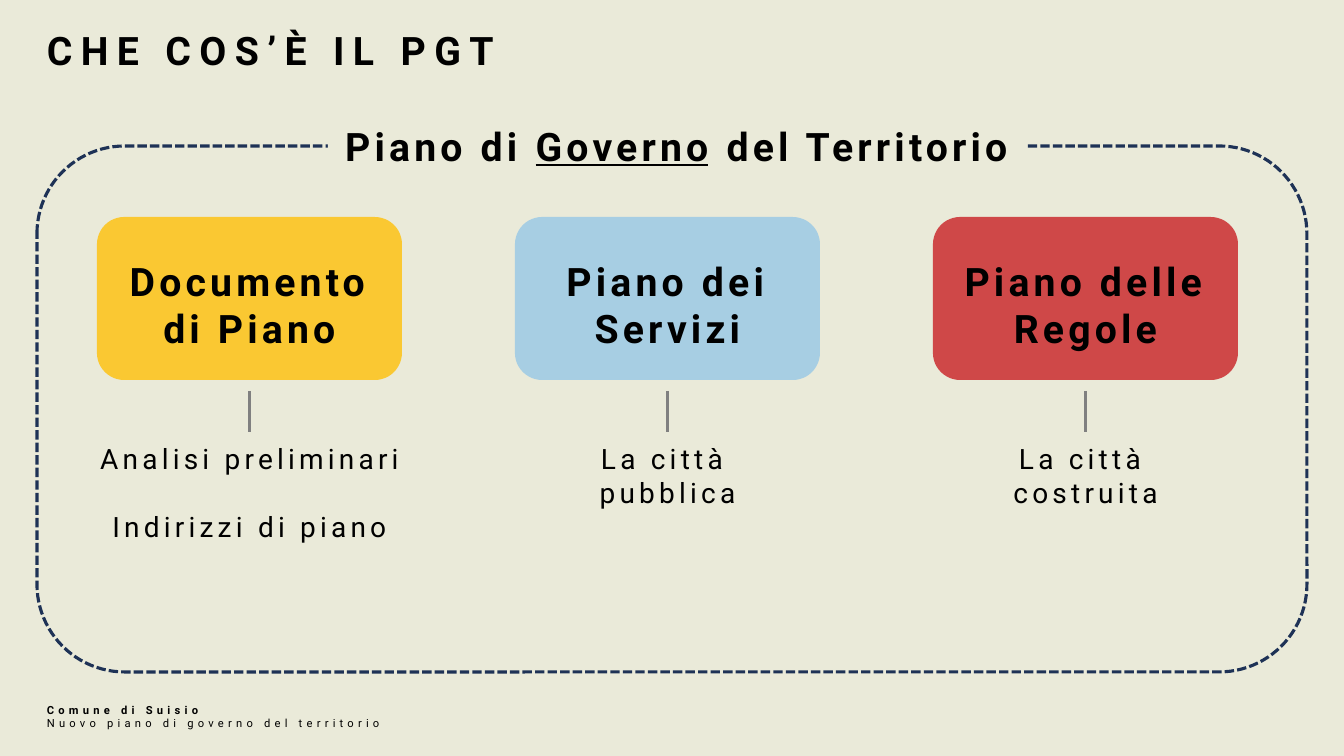
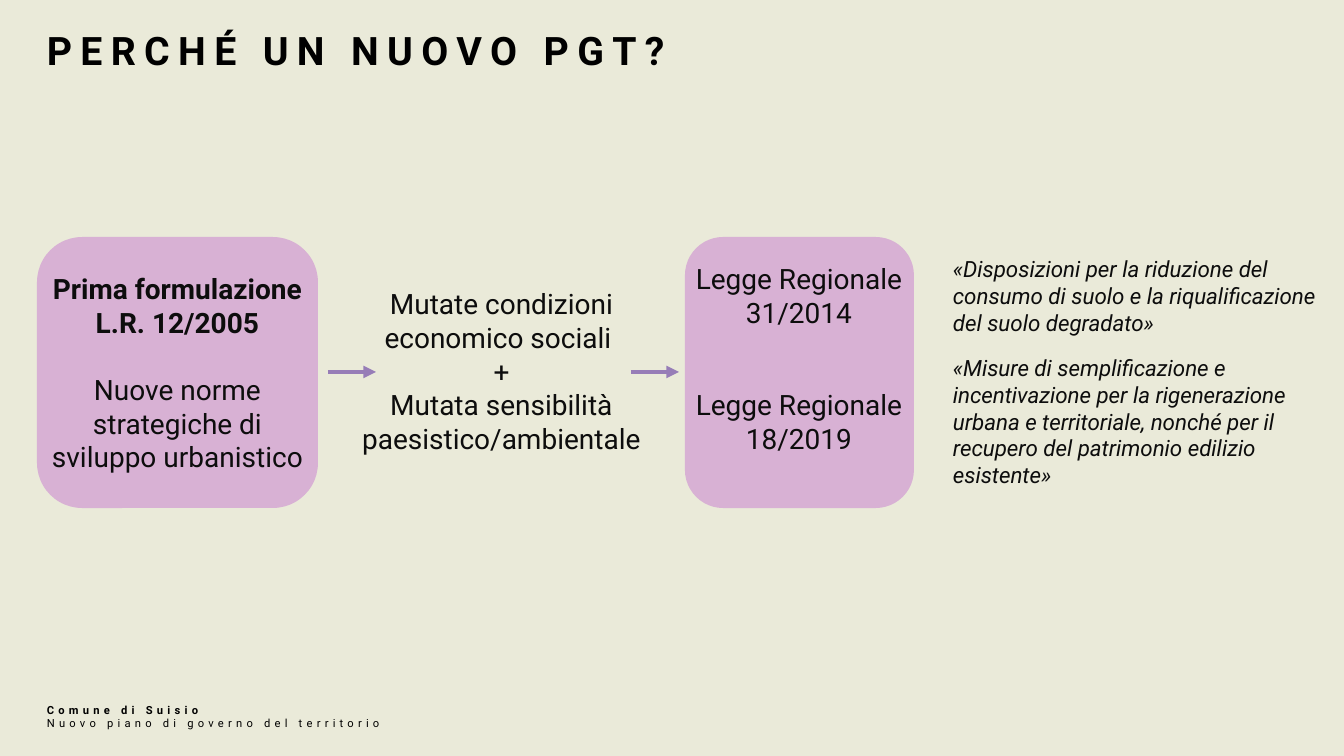
"""Builds two slides that explain the town plan and why a new one is needed."""
from dataclasses import dataclass

from lxml.etree import SubElement
from pptx import Presentation
from pptx.dml.color import RGBColor
from pptx.enum.dml import MSO_LINE
from pptx.enum.shapes import MSO_CONNECTOR, MSO_SHAPE
from pptx.enum.text import MSO_ANCHOR, PP_ALIGN
from pptx.oxml.ns import qn
from pptx.util import Emu, Pt


@dataclass(frozen=True)
class Theme:
    """Colours, font and type styles."""
    font: str = "Roboto"
    background: str = "EAEAD9"
    frame: str = "1E3256"
    stem: str = "808080"
    law_card: str = "D8B1D4"
    arrow: str = "977DB7"
    black: str = "000000"
    ink: str = "0D0D0D"
    blank_line: int = 24

    def style(self, size, color, spacing=0, **flags):
        return {"size": size, "color": color, "spacing": spacing, **flags}


THEME = Theme()
TITLE = THEME.style(28, THEME.black, 6, bold=True)
HEADING = THEME.style(28, THEME.black, 3, bold=True)
DETAIL = THEME.style(20, THEME.black, 3)
FOOTER = THEME.style(8, THEME.black, 3)
BODY = THEME.style(20, THEME.ink)
QUOTE = THEME.style(16, THEME.ink, italic=True)

BOLD, UNDERLINE = {"bold": True}, {"underline": True}
SLIDE_SIZE = (1344, 756)
TITLE_BOX = (37, 21, 1270, 57)
FOOTER_BOX = (37, 698, 379, 37)
FOOTER_TEXT = [
    [("Comune di Suisio", BOLD)],
    ["Nuovo piano di governo del territorio"],
]

PLAN_TITLE = "CHE COS’È IL PGT"
PLAN_FRAME = (37, 146, 1270, 526)
PLAN_LABEL_BOX = (328, 117, 697, 57)
PLAN_LABEL = [["Piano di ", ("Governo", UNDERLINE), " del Territorio"]]
PLAN_PARTS = [
    ("Documento di Piano", "FAC832", ["Analisi preliminari", "Indirizzi di piano"], THEME.blank_line),
    ("Piano dei Servizi", "A7CEE3", ["La città ", "pubblica"], 0),
    ("Piano delle Regole", "CF4848", ["La città ", "costruita"], 0),
]
PART_LEFT, PART_TOP, PART_WIDTH, PART_HEIGHT, PART_STEP = 97, 217, 305, 163, 418
STEM_TOP, STEM_BOTTOM = 391, 432
DETAIL_TOP, DETAIL_WIDTH, DETAIL_HEIGHT = 437, 356, 112

REASON_TITLE = "PERCHÉ UN NUOVO PGT?"
CARD_TOP, CARD_HEIGHT = 237, 271
FIRST_LAW_BOX = (37, CARD_TOP, 281, CARD_HEIGHT)
NEW_LAWS_BOX = (685, CARD_TOP, 229, CARD_HEIGHT)
FIRST_LAW = [
    [("Prima formulazione ", BOLD)],
    [("L.R. 12/2005", BOLD)],
    ["Nuove norme strategiche di sviluppo urbanistico"],
]
CHANGES_BOX = (350, 282, 303, 180)
CHANGES = [
    ["Mutate condizioni economico sociali "],
    ["+"],
    ["Mutata sensibilità paesistico/ambientale"],
]
NEW_LAWS = [
    ("Legge Regionale 31/2014", (656, 257, 286, 78),
     "«Disposizioni per la riduzione del consumo di suolo e la riqualificazione del suolo degradato»",
     (943, 250, 401, 92)),
    ("Legge Regionale 18/2019", (656, 383, 286, 78),
     "«Misure di semplificazione e incentivazione per la rigenerazione urbana e territoriale, "
     "nonché per il recupero del patrimonio edilizio esistente»",
     (943, 349, 401, 146)),
]
ARROW_STARTS, ARROW_LENGTH = (328, 631), 48
ARROW_Y = CARD_TOP + CARD_HEIGHT // 2


def px(value):
    return Emu(round(value * 914400 / 100.8))


def rgb(value):
    return RGBColor.from_string(value)


def write_run(paragraph, text, style):
    run = paragraph.add_run()
    run.text = text
    run.font.name = THEME.font
    run.font.size = Pt(style["size"])
    run.font.color.rgb = rgb(style["color"])
    for name in ("bold", "italic", "underline"):
        setattr(run.font, name, style.get(name, False))
    if style["spacing"]:
        run._r.get_or_add_rPr().set("spc", str(style["spacing"] * 100))


def write(shape, paragraphs, style, align=PP_ALIGN.CENTER, gaps=None, **frame_format):
    """Fills a shape; gaps maps a paragraph index to the points before it."""
    frame = shape.text_frame
    frame.word_wrap = True
    for name, value in frame_format.items():
        setattr(frame, name, value)
    for index, pieces in enumerate(paragraphs):
        paragraph = frame.paragraphs[0] if index == 0 else frame.add_paragraph()
        paragraph.alignment = align
        if gaps and gaps.get(index):
            paragraph.space_before = Pt(gaps[index])
        for piece in pieces:
            text, changes = (piece, {}) if isinstance(piece, str) else piece
            write_run(paragraph, text, {**style, **changes})


def add_text(slide, box, paragraphs, style, **options):
    write(slide.shapes.add_textbox(*map(px, box)), paragraphs, style, **options)


def add_box(slide, box, fill=None, kind=MSO_SHAPE.ROUNDED_RECTANGLE):
    shape = slide.shapes.add_shape(kind, *map(px, box))
    shape.shadow.inherit = False
    shape.line.fill.background()
    if fill:
        shape.fill.solid()
        shape.fill.fore_color.rgb = rgb(fill)
    else:
        shape.fill.background()
    return shape


def set_line(line, color, width):
    line.color.rgb = rgb(color)
    line.width = Pt(width)


def add_line(slide, start, end, color, width, arrow=False):
    connector = slide.shapes.add_connector(MSO_CONNECTOR.STRAIGHT, *map(px, start + end))
    set_line(connector.line, color, width)
    if arrow:
        SubElement(connector.line._get_or_add_ln(), qn("a:tailEnd"), type="triangle")
    SubElement(connector._element.spPr, qn("a:effectLst"))


def add_slide(presentation, title):
    slide = presentation.slides.add_slide(presentation.slide_layouts[6])
    add_text(slide, FOOTER_BOX, FOOTER_TEXT, FOOTER, align=PP_ALIGN.LEFT)
    add_text(slide, TITLE_BOX, [[title]], TITLE, align=PP_ALIGN.LEFT)
    return slide


def build_plan(presentation):
    slide = add_slide(presentation, PLAN_TITLE)
    frame = add_box(slide, PLAN_FRAME)
    set_line(frame.line, THEME.frame, 2.25)
    frame.line.dash_style = MSO_LINE.SQUARE_DOT
    label = add_box(slide, PLAN_LABEL_BOX, THEME.background, MSO_SHAPE.RECTANGLE)
    write(label, PLAN_LABEL, HEADING, vertical_anchor=MSO_ANCHOR.MIDDLE)
    for index, (name, color, details, gap) in enumerate(PLAN_PARTS):
        left = PART_LEFT + index * PART_STEP
        center = left + PART_WIDTH / 2
        card = add_box(slide, (left, PART_TOP, PART_WIDTH, PART_HEIGHT), color)
        write(card, [[name]], HEADING, vertical_anchor=MSO_ANCHOR.TOP, margin_top=px(32))
        add_line(slide, (center, STEM_TOP), (center, STEM_BOTTOM), THEME.stem, 2.25)
        detail_box = (center - DETAIL_WIDTH / 2, DETAIL_TOP, DETAIL_WIDTH, DETAIL_HEIGHT)
        add_text(slide, detail_box, [[detail] for detail in details], DETAIL, gaps={1: gap})


def build_reasons(presentation):
    slide = add_slide(presentation, REASON_TITLE)
    first_law = add_box(slide, FIRST_LAW_BOX, THEME.law_card)
    write(first_law, FIRST_LAW, BODY, gaps={2: THEME.blank_line},
          vertical_anchor=MSO_ANCHOR.MIDDLE, margin_left=0, margin_right=0)
    add_box(slide, NEW_LAWS_BOX, THEME.law_card)
    add_text(slide, CHANGES_BOX, CHANGES, BODY)
    for law, law_box, quote, quote_box in NEW_LAWS:
        add_text(slide, law_box, [[law]], BODY)
        add_text(slide, quote_box, [[quote]], QUOTE, align=PP_ALIGN.LEFT)
    for start in ARROW_STARTS:
        add_line(slide, (start, ARROW_Y), (start + ARROW_LENGTH, ARROW_Y), THEME.arrow, 3, arrow=True)


def main():
    presentation = Presentation()
    presentation.slide_width, presentation.slide_height = map(px, SLIDE_SIZE)
    background = presentation.slide_master.background.fill
    background.solid()
    background.fore_color.rgb = rgb(THEME.background)
    build_plan(presentation)
    build_reasons(presentation)
    presentation.save("out.pptx")


if __name__ == "__main__":
    main()
